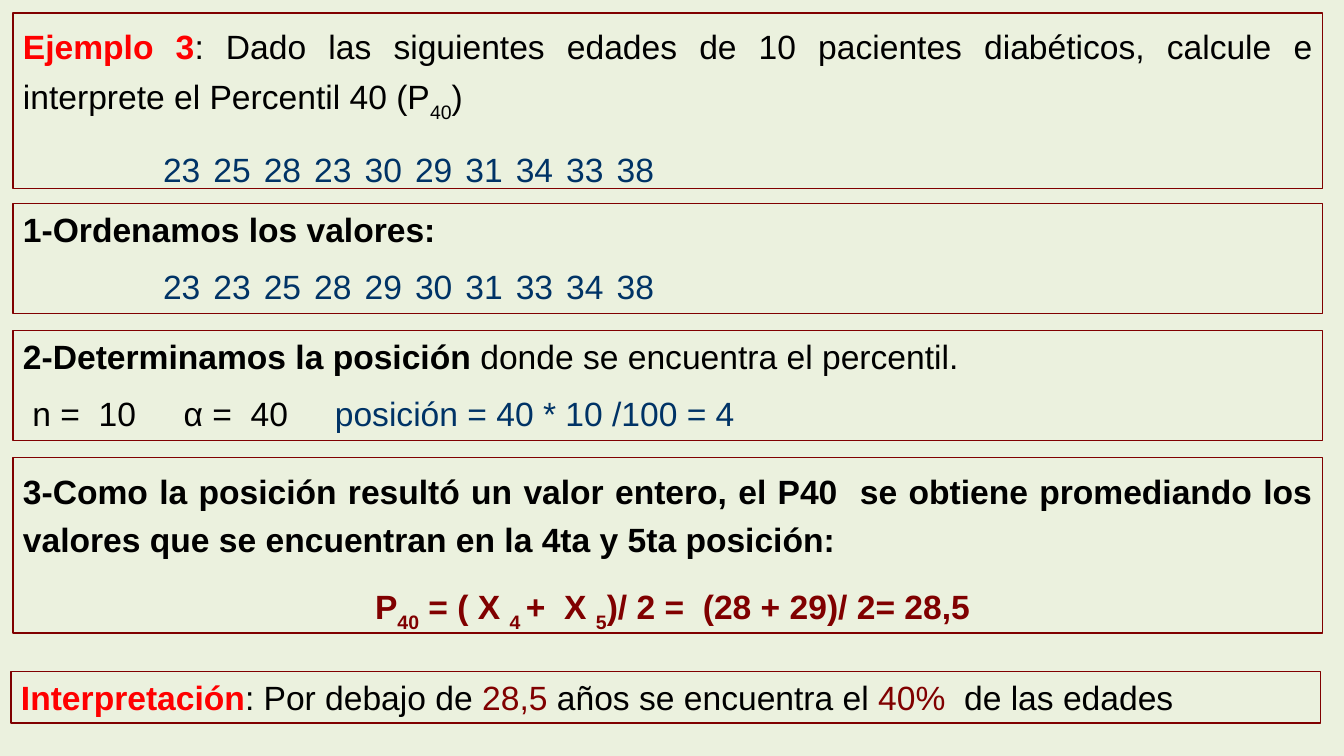
from dataclasses import dataclass
from itertools import accumulate

from lxml import etree
from pptx import Presentation
from pptx import util as u
from pptx.dml.color import RGBColor
from pptx.enum import shapes, text
from pptx.oxml.ns import qn

HUES = {
    "back": "EBF1DE",
    "frame": "800000",
    "black": "000000",
    "red": "FF0000",
    "navy": "003366",
}
SIZE = 24
DIGITS = 0.94
SPACE = 0.235
INDENT = 3.53


@dataclass
class Span:
    words: str
    hue: str = "black"
    bold: bool = False
    sub: bool = False


@dataclass
class Line:
    spans: list[Span]
    align: text.PP_ALIGN = text.PP_ALIGN.JUSTIFY
    indent: float = 0
    stops: tuple[float, ...] = ()


@dataclass
class Box:
    left: float
    top: float
    height: float
    lines: list[Line]
    pitch: float = 1.0


def ages(values: str, gaps: list[int]) -> Line:
    steps = [DIGITS * 2 + SPACE * gap - DIGITS for gap in gaps]
    stops = tuple(accumulate(steps, initial=INDENT))[1:]
    spans = [Span("\t".join(values.split()), "navy")]
    return Line(spans, text.PP_ALIGN.LEFT, INDENT, stops)


def color(name: str) -> RGBColor:
    return RGBColor.from_string(HUES[name])


def write(para, line: Line, pitch: float) -> None:
    para.alignment = line.align
    para.line_spacing = pitch
    para.space_before = u.Pt(12.5)
    props = para._p.get_or_add_pPr()
    props.set("marL", str(u.Cm(line.indent)))
    props.set("indent", "0")
    if line.stops:
        tabs = etree.SubElement(props, qn("a:tabLst"))
        for stop in line.stops:
            etree.SubElement(tabs, qn("a:tab"), pos=str(u.Cm(stop)), algn="l")
    for span in line.spans:
        run = para.add_run()
        run.text = span.words
        run.font.name = "Arial"
        run.font.size = u.Pt(SIZE)
        run.font.bold = span.bold
        run.font.color.rgb = color(span.hue)
        if span.sub:
            run._r.get_or_add_rPr().set("baseline", "-30000")


def draw(slide, box: Box) -> None:
    shape = slide.shapes.add_shape(
        shapes.MSO_SHAPE.RECTANGLE,
        u.Cm(box.left), u.Cm(box.top), u.Cm(33), u.Cm(box.height),
    )
    shape.shadow.inherit = False
    shape.fill.background()
    shape.line.color.rgb = color("frame")
    shape.line.width = u.Pt(1)
    frame = shape.text_frame
    frame.word_wrap = True
    frame.auto_size = text.MSO_AUTO_SIZE.SHAPE_TO_FIT_TEXT
    frame.vertical_anchor = text.MSO_ANCHOR.TOP
    for index, line in enumerate(box.lines):
        para = frame.add_paragraph() if index else frame.paragraphs[0]
        write(para, line, box.pitch)


BOXES = [
    Box(0.33, 0.33, 4.42, [
        Line([
            Span("Ejemplo 3", "red", True),
            Span(": Dado las siguientes edades de 10 pacientes diabéticos, "
                 "calcule e interprete el Percentil 40 (P"),
            Span("40", sub=True),
            Span(")"),
        ]),
        ages("23 25 28 23 30 29 31 34 33 38", [3, 3, 3, 3, 2, 3, 2, 2, 4]),
    ], 1.2),
    Box(0.33, 5.13, 2.77, [
        Line([Span("1-Ordenamos los valores:", bold=True)]),
        ages("23 23 25 28 29 30 31 33 34 38", [3, 3, 4, 3, 3, 3, 3, 3, 3]),
    ]),
    Box(0.33, 8.33, 2.77, [
        Line([
            Span("2-Determinamos la posición", bold=True),
            Span(" donde se encuentra el percentil."),
        ]),
        Line([
            Span("n =  10\tα =  40\t"),
            Span("posición = 40 * 10 /100 = 4", "navy"),
        ], text.PP_ALIGN.LEFT, 0.24, (4.49, 8.77)),
    ]),
    Box(0.33, 11.53, 4.42, [
        Line([Span("3-Como la posición resultó un valor entero, el P40  se "
                   "obtiene promediando los valores que se encuentran en la "
                   "4ta y 5ta posición:", bold=True)]),
        Line([
            Span("P", "frame", True),
            Span("40", "frame", True, True),
            Span(" = ( X ", "frame", True),
            Span("4 ", "frame", True, True),
            Span("+  X ", "frame", True),
            Span("5", "frame", True, True),
            Span(")/ 2 =  (28 + 29)/ 2= 28,5", "frame", True),
        ], text.PP_ALIGN.CENTER, 0.24),
    ], 1.2),
    Box(0.28, 16.92, 1.3, [
        Line([
            Span("Interpretación", "red", True),
            Span(": Por debajo de "),
            Span("28,5", "frame"),
            Span(" años se encuentra el "),
            Span("40%", "frame"),
            Span("  de las edades"),
        ]),
    ]),
]


def main() -> None:
    deck = Presentation()
    deck.slide_width, deck.slide_height = u.Cm(33.87), u.Cm(19.05)
    slide = deck.slides.add_slide(deck.slide_layouts[6])
    slide.background.fill.solid()
    slide.background.fill.fore_color.rgb = color("back")
    for box in BOXES:
        draw(slide, box)
    deck.save("out.pptx")


if __name__ == "__main__":
    main()
